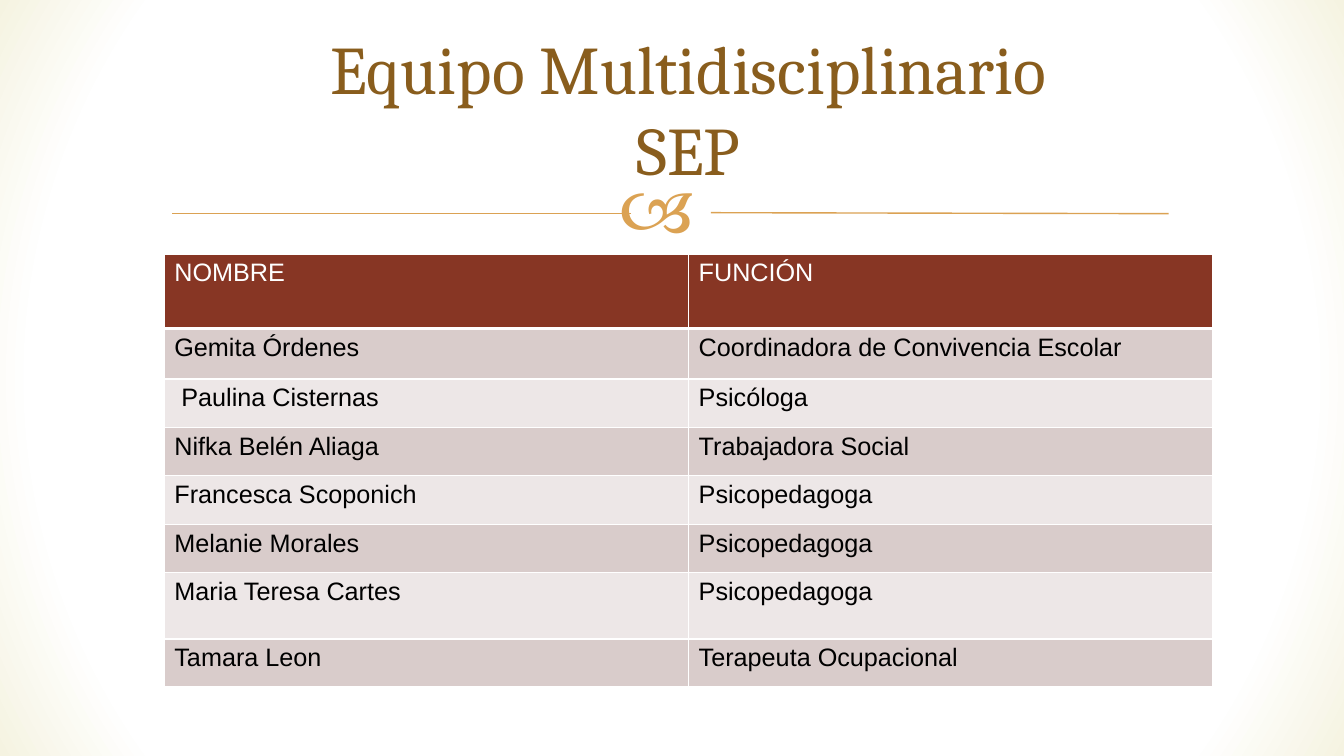
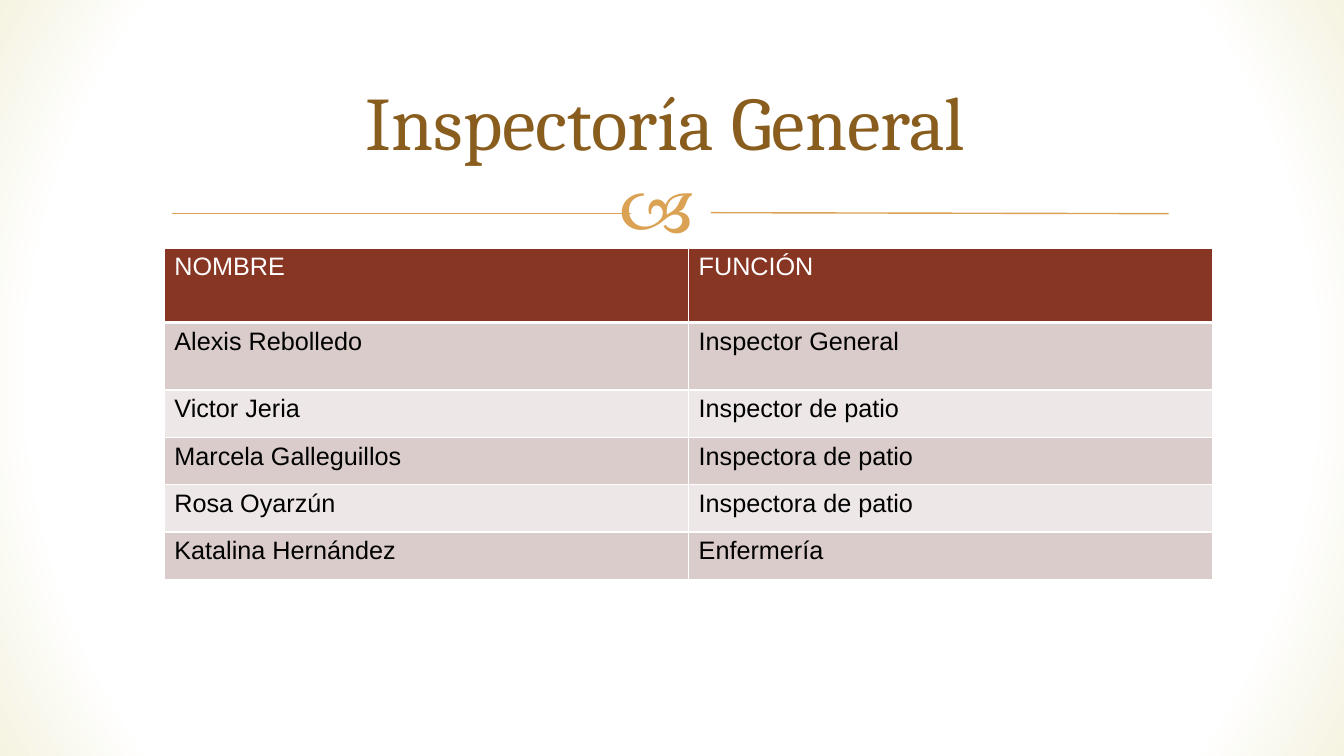
from pptx import Presentation
from pptx import util as u
from pptx.dml.color import RGBColor
from pptx.enum import shapes, text
from pptx.oxml import parse_xml
from pptx.oxml.ns import nsdecls, qn
from lxml import etree

WHITE, BLACK = "FFFFFF", "000000"
BROWN, GOLD, CREAM = "895D1D", "DBA253", "F5F3E1"
HEADER, BANDS = "873624", ("D9CCCB", "EDE7E7")
TITLE_FONT, TABLE_FONT, ORNAMENT_FONT = "Cambria", "Arial", "Open Sans"
HEADINGS = ("NOMBRE", "FUNCIÓN")
TABLE_LEFT, COLUMN_WIDTH = 1.63, 5.2

TEAM = [
    ("Gemita Órdenes", "Coordinadora de Convivencia Escolar"),
    (" Paulina Cisternas", "Psicóloga"),
    ("Nifka Belén Aliaga", "Trabajadora Social"),
    ("Francesca Scoponich", "Psicopedagoga"),
    ("Melanie Morales", "Psicopedagoga"),
    ("Maria Teresa Cartes", "Psicopedagoga"),
    ("Tamara Leon", "Terapeuta Ocupacional"),
]
INSPECTORS = [
    ("Alexis Rebolledo", "Inspector General"),
    ("Victor Jeria", "Inspector de patio"),
    ("Marcela Galleguillos", "Inspectora de patio"),
    ("Rosa Oyarzún", "Inspectora de patio"),
    ("Katalina Hernández", "Enfermería"),
]


def color(value):
    return RGBColor.from_string(value)


def box(*lengths):
    return [u.Inches(length) for length in lengths]


def add_run(paragraph, words, font, size, ink):
    run = paragraph.add_run()
    run.text = words
    run.font.name = font
    run.font.size = u.Pt(size)
    run.font.bold = False
    run.font.color.rgb = color(ink)


def paint_background(master):
    master.background.fill.gradient()
    gradient = next(master.element.iter(qn("a:gradFill")))
    stops = "".join(
        f'<a:gs pos="{position * 1000}"><a:srgbClr val="{ink}"/></a:gs>'
        for position, ink in ((0, WHITE), (83, WHITE), (100, CREAM)))
    glow = parse_xml(
        f'<a:gradFill {nsdecls("a")} rotWithShape="1"><a:gsLst>{stops}</a:gsLst>'
        '<a:path path="circle"><a:fillToRect l="50000" t="50000" r="50000" b="50000"/>'
        '</a:path></a:gradFill>')
    gradient.getparent().replace(gradient, glow)


def add_rule(slide, *ends):
    rule = slide.shapes.add_connector(shapes.MSO_CONNECTOR.STRAIGHT, *box(*ends))
    rule.line.color.rgb = color(GOLD)
    rule.line.width = u.Pt(1)
    etree.SubElement(rule.element.spPr, qn("a:effectLst"))


def add_ornament(slide):
    frame = slide.shapes.add_textbox(*box(6.05, 1.52, 1.28, 1.01)).text_frame
    frame.word_wrap = True
    add_run(frame.paragraphs[0], "🙢", ORNAMENT_FONT, 54, GOLD)
    add_rule(slide, 6.26, 2.12, 1.71, 2.12)
    add_rule(slide, 11.59, 2.12, 7.05, 2.11)


def set_title(slide, lines, size, place):
    title = slide.shapes.title
    title.left, title.top, title.width, title.height = box(*place)
    frame = title.text_frame
    frame.word_wrap = True
    frame.auto_size = text.MSO_AUTO_SIZE.NONE
    frame.vertical_anchor = text.MSO_ANCHOR.MIDDLE
    paragraph = frame.paragraphs[0]
    paragraph.alignment = text.PP_ALIGN.CENTER
    for number, line in enumerate(lines):
        if number:
            paragraph.add_line_break()
        add_run(paragraph, line, TITLE_FONT, size, BROWN)


def set_borders(cell, top, bottom):
    properties = cell._tc.get_or_add_tcPr()
    for side, width in (("L", 1), ("R", 1), ("T", top), ("B", bottom)):
        properties.append(parse_xml(
            f'<a:ln{side} {nsdecls("a")} w="{u.Pt(width)}"><a:solidFill>'
            f'<a:srgbClr val="{WHITE}"/></a:solidFill></a:ln{side}>'))


def add_staff_table(slide, staff, top, heights):
    rows = [HEADINGS, *staff]
    place = box(TABLE_LEFT, top, COLUMN_WIDTH * len(HEADINGS), sum(heights))
    table = slide.shapes.add_table(len(rows), len(HEADINGS), *place).table
    for column in table.columns:
        column.width = u.Inches(COLUMN_WIDTH)
    for number, (entries, height) in enumerate(zip(rows, heights)):
        table.rows[number].height = u.Inches(height)
        heading = number == 0
        fill = HEADER if heading else BANDS[(number - 1) % 2]
        for column, words in enumerate(entries):
            cell = table.cell(number, column)
            set_borders(cell, 3 if number == 1 else 1, 3 if heading else 1)
            cell.fill.solid()
            cell.fill.fore_color.rgb = color(fill)
            add_run(cell.text_frame.paragraphs[0], words, TABLE_FONT, 18,
                    WHITE if heading else BLACK)


def add_staff_slide(deck, lines, size, title_place, staff, top, heights):
    slide = deck.slides.add_slide(deck.slide_layouts.get_by_name("Title Only"))
    add_ornament(slide)
    set_title(slide, lines, size, title_place)
    add_staff_table(slide, staff, top, heights)


def main():
    deck = Presentation()
    deck.slide_width, deck.slide_height = box(13.33, 7.5)
    paint_background(deck.slide_master)
    add_staff_slide(deck, ["Equipo Multidisciplinario", "SEP"], 48.6,
                    (1.87, 0.32, 9.91, 1.5), TEAM, 2.52,
                    [0.74, 0.5] + [0.48] * 4 + [0.66, 0.47])
    add_staff_slide(deck, ["Inspectoría General"], 54,
                    (1.26, 0.62, 10.68, 1.15), INSPECTORS, 2.46,
                    [0.74, 0.67] + [0.47] * 4)
    deck.save("out.pptx")


if __name__ == "__main__":
    main()
